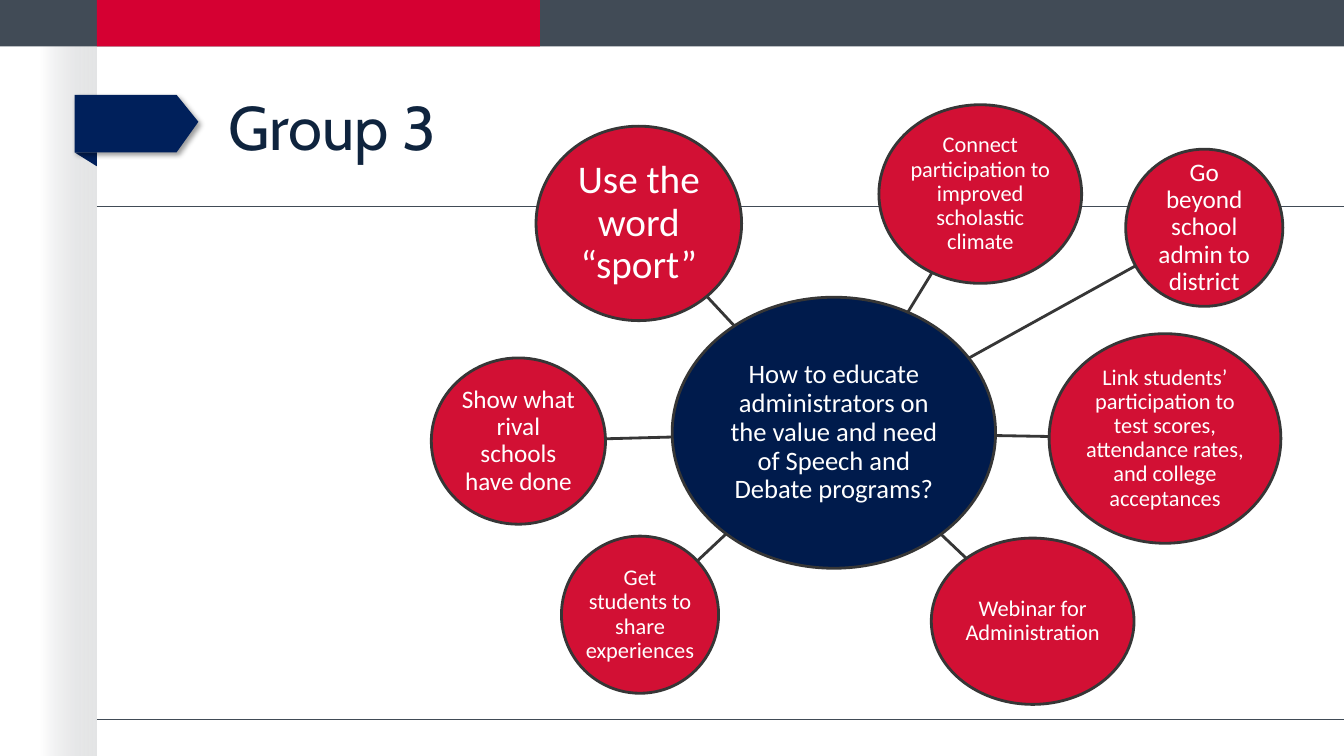
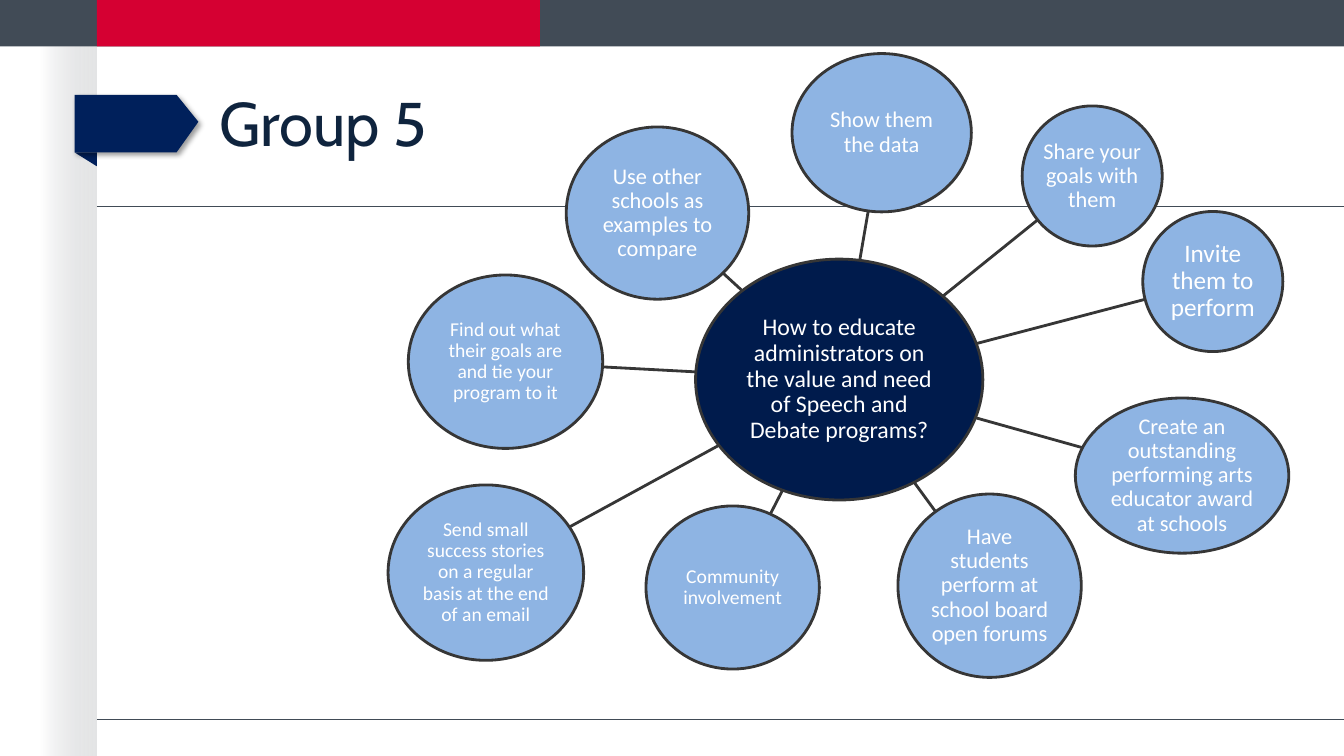
import math

import pptx
import pptx.dml.color
import pptx.enum.shapes
import pptx.enum.text
import pptx.oxml
import pptx.oxml.ns
import pptx.util
from pptx.util import Cm

WIDTH, HEIGHT = 33.87, 19.05
MARGIN = 2.44  # left edge of the page area
BAND_HEIGHT = 1.17
SLATE, RED, TAG_NAVY = "414B56", "D50032", "00205B"
TITLE_COLOR, HUB_NAVY, OUTLINE, WHITE = "0F243E", "001B4C", "363636", "FFFFFF"
QUESTION = ("How to educate administrators on the value and need "
            "of Speech and Debate programs?")
TAG_SHADOW = (
    f'<a:outerShdw {pptx.oxml.ns.nsdecls("a")} blurRad="50800" dist="38100" '
    'dir="2700000" algn="tl" rotWithShape="0"><a:srgbClr val="000000">'
    '<a:alpha val="40000"/></a:srgbClr></a:outerShdw>')

# Each bubble: (left, top, width, height) in cm, font size, text
DIAGRAMS = [
    {
        "title": "Group 3", "title_at": (5.51, 2.11), "color": "D21034",
        "hub": ((16.94, 7.49, 8.15, 6.83), 19, QUESTION),
        "ideas": [
            ((22.15, 2.64, 5.11, 4.5), 16,
             "Connect participation to improved scholastic climate"),
            ((28.37, 3.76, 3.96, 3.96), 18, "Go beyond school admin to district"),
            ((26.44, 8.41, 5.84, 5.28), 16,
             "Link students’ participation to test scores, "
             "attendance rates, and college acceptances"),
            ((23.47, 13.56, 5.11, 4.19), 16, "Webinar for Administration"),
            ((14.15, 13.51, 3.96, 3.96), 16, "Get students to share experiences"),
            ((10.87, 9.02, 4.39, 4.19), 18, "Show what rival schools have done"),
            ((13.51, 3.18, 5.18, 4.9), 28, "Use the word “sport”"),
        ],
    },
    {
        "title": "Group 5", "title_at": (5.28, 2.01), "color": "8EB4E3",
        "hub": ((17.53, 6.53, 7.24, 6.07), 17, QUESTION),
        "ideas": [
            ((19.96, 1.35, 4.52, 3.99), 16, "Show them the data"),
            ((25.76, 2.67, 3.53, 3.53), 16, "Share your goals with them"),
            ((28.8, 5.33, 3.53, 3.53), 18, "Invite them to perform"),
            ((27.1, 10.03, 5.38, 3.91), 16,
             "Create an outstanding performing arts educator award at schools"),
            ((22.63, 12.45, 4.62, 4.62), 16,
             "Have students perform at school board open forums"),
            ((16.28, 12.75, 4.37, 4.11), 14, "Community involvement"),
            ((9.78, 12.22, 4.93, 4.42), 14,
             "Send small success stories on a regular basis at the end of an email"),
            ((10.29, 6.93, 4.9, 4.37), 14,
             "Find out what their goals are and tie your program to it"),
            ((14.27, 3.2, 4.6, 4.34), 16, "Use other schools as examples to compare"),
        ],
    },
]


def rgb(value):
    return pptx.dml.color.RGBColor.from_string(value)


def apply(target, values):
    for name, value in values.items():
        setattr(target, name, value)


def center(box):
    left, top, width, height = box
    return left + width / 2, top + height / 2


def edge_point(box, toward):
    """Point where the ray from the oval's center to a target leaves the oval."""
    x, y = center(box)
    dx, dy = toward[0] - x, toward[1] - y
    scale = 1 / math.hypot(dx / (box[2] / 2), dy / (box[3] / 2))
    return x + dx * scale, y + dy * scale


class Deck:
    BUBBLE_FRAME = {
        "word_wrap": True,
        "vertical_anchor": pptx.enum.text.MSO_ANCHOR.MIDDLE,
        **dict.fromkeys(("margin_left", "margin_top",
                         "margin_right", "margin_bottom"), Cm(0.02)),
    }
    BUBBLE_PARAGRAPH = {"alignment": pptx.enum.text.PP_ALIGN.CENTER,
                        "line_spacing": 0.9}

    def __init__(self):
        self.presentation = pptx.Presentation()
        apply(self.presentation, {"slide_width": Cm(WIDTH),
                                  "slide_height": Cm(HEIGHT)})
        self.slide = None

    def add_slide(self):
        layout = self.presentation.slide_layouts[6]
        self.slide = self.presentation.slides.add_slide(layout)
        self.add_background()

    def finish(self, shape, color):
        shape.shadow.inherit = False
        shape.fill.solid()
        shape.fill.fore_color.rgb = rgb(color)
        shape.line.fill.background()
        return shape

    def add_preset(self, kind, box, color):
        shape = self.slide.shapes.add_shape(kind, *map(Cm, box))
        return self.finish(shape, color)

    def add_rectangle(self, box, color):
        return self.add_preset(pptx.enum.shapes.MSO_SHAPE.RECTANGLE, box, color)

    def add_outline(self, points, color):
        start, *others = [(Cm(x), Cm(y)) for x, y in points]
        builder = self.slide.shapes.build_freeform(*start)
        builder.add_line_segments(others, close=True)
        return self.finish(builder.convert_to_shape(), color)

    def add_line(self, start, end, color, width):
        line = self.slide.shapes.add_connector(
            pptx.enum.shapes.MSO_CONNECTOR.STRAIGHT, *map(Cm, start + end))
        line.line.color.rgb = rgb(color)
        line.line.width = pptx.util.Pt(width)
        line._element.spPr.append(pptx.oxml.parse_xml(
            f'<a:effectLst {pptx.oxml.ns.nsdecls("a")}/>'))

    def add_text(self, frame, text, size, font_name, color, values=None):
        paragraph = frame.paragraphs[0]
        apply(paragraph, values or {})
        run = paragraph.add_run()
        run.text = text
        apply(run.font, {"name": font_name, "size": pptx.util.Pt(size)})
        run.font.color.rgb = rgb(color)

    def add_background(self):
        # Side strip fading in from the left
        strip = self.add_rectangle((1.02, 1.14, 1.42, HEIGHT - 1.14), WHITE)
        strip.fill.gradient()
        strip.fill.gradient_angle = 0
        for stop, color in zip(strip.fill.gradient_stops, ("C8C9CC", "E4E5E6")):
            stop.color.rgb = rgb(color)
        first_color = next(strip._element.iter(pptx.oxml.ns.qn("a:srgbClr")))
        first_color.append(pptx.oxml.parse_xml(
            f'<a:alpha {pptx.oxml.ns.nsdecls("a")} val="0"/>'))
        # Top band and rules
        self.add_rectangle((0, 0, WIDTH, BAND_HEIGHT), SLATE)
        self.add_rectangle((MARGIN, 0, 11.17, BAND_HEIGHT), RED)
        for y in (5.21, 18.13):
            self.add_line((MARGIN, y), (WIDTH, y), SLATE, 1)
        # Folded tag beside the title
        self.add_outline([(1.88, 3.84), (MARGIN, 3.84), (MARGIN, 4.19)], TAG_NAVY)
        tag = self.add_outline([(1.88, 2.39), (1.88, 3.84), (4.45, 3.84),
                                (5, 3.07), (4.45, 2.39)], TAG_NAVY)
        effects = tag._element.spPr.find(pptx.oxml.ns.qn("a:effectLst"))
        effects.append(pptx.oxml.parse_xml(TAG_SHADOW))

    def add_title(self, text, position):
        box = self.slide.shapes.add_textbox(*map(Cm, position + (6.55, 2.13)))
        box.text_frame.word_wrap = True
        self.add_text(box.text_frame, text, 44, "Cabin", TITLE_COLOR)

    def add_bubble(self, box, size, text, color):
        bubble = self.add_preset(pptx.enum.shapes.MSO_SHAPE.OVAL, box, color)
        bubble.line.color.rgb = rgb(OUTLINE)
        bubble.line.width = pptx.util.Pt(2)
        apply(bubble.text_frame, self.BUBBLE_FRAME)
        self.add_text(bubble.text_frame, text, size, "Calibri", WHITE,
                      self.BUBBLE_PARAGRAPH)

    def add_diagram(self, hub, ideas, color):
        self.add_bubble(*hub, HUB_NAVY)
        hub_box = hub[0]
        for box, size, text in ideas:
            self.add_line(edge_point(hub_box, center(box)),
                          edge_point(box, center(hub_box)), OUTLINE, 2)
            self.add_bubble(box, size, text, color)


def main():
    deck = Deck()
    for diagram in DIAGRAMS:
        deck.add_slide()
        deck.add_diagram(diagram["hub"], diagram["ideas"], diagram["color"])
        deck.add_title(diagram["title"], diagram["title_at"])
    deck.presentation.save("out.pptx")


if __name__ == "__main__":
    main()
